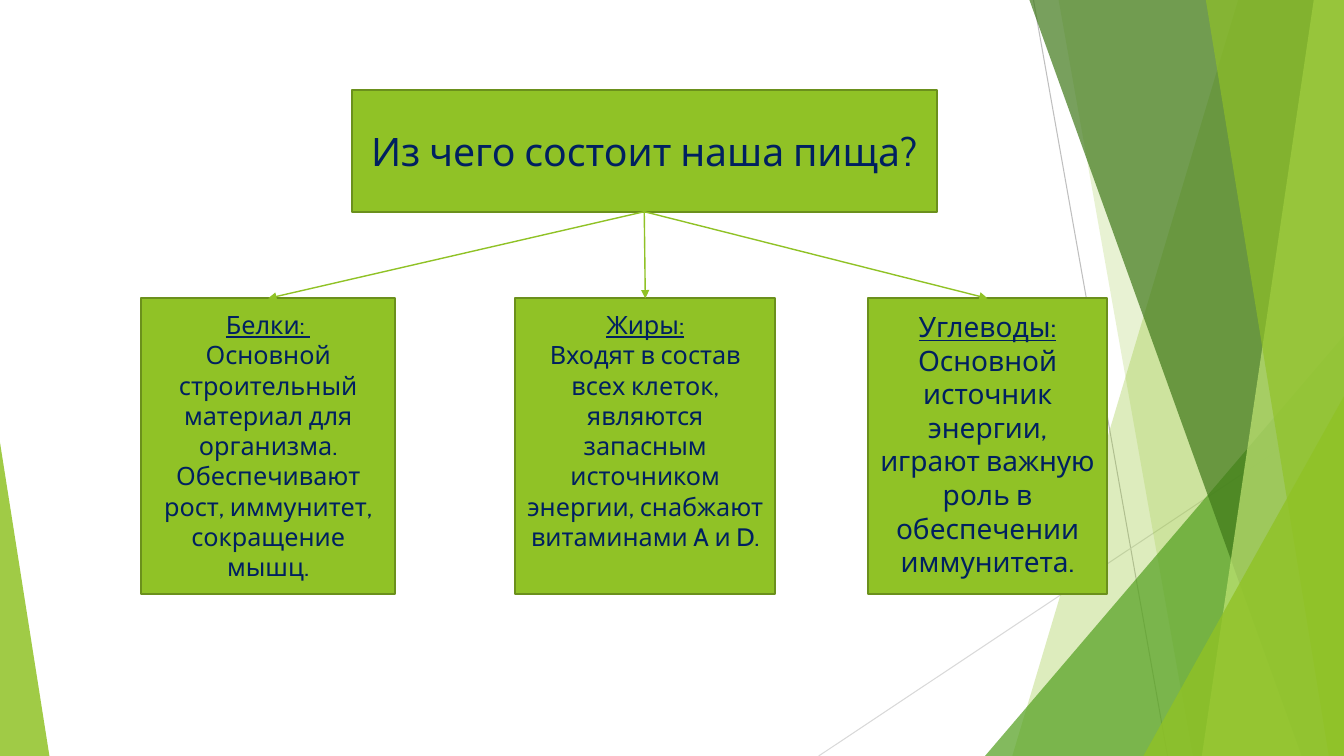
from dataclasses import dataclass

from lxml import etree
from pptx import Presentation
from pptx.dml.color import RGBColor
from pptx.enum.shapes import MSO_CONNECTOR, MSO_SHAPE
from pptx.enum.text import MSO_ANCHOR, MSO_AUTO_SIZE, PP_ALIGN
from pptx.oxml.ns import qn
from pptx.util import Inches, Pt

STRAIGHT = MSO_CONNECTOR.STRAIGHT
RECTANGLE = MSO_SHAPE.RECTANGLE
TRIANGLE = MSO_SHAPE.ISOSCELES_TRIANGLE
TOP, MIDDLE = MSO_ANCHOR.TOP, MSO_ANCHOR.MIDDLE
CENTER = PP_ALIGN.CENTER
NO_AUTOFIT = MSO_AUTO_SIZE.NONE
TOP_SITE, BOTTOM_SITE = 0, 2
TITLE_ONLY = 5


@dataclass(frozen=True)
class Theme:
    font: str = "Cabin"
    ink: str = "002060"
    green: str = "90C226"
    border: str = "6B901C"
    leaf: str = "54A021"
    forest: str = "3F7819"
    lime: str = "C0E474"
    gray: str = "BFBFBF"
    pale_gray: str = "D9D9D9"
    title_size: int = 28
    large_size: int = 20
    body_size: int = 18
    border_width: float = 1.5
    arrow_width: float = 1
    hairline: float = 0.75


THEME = Theme()
WIDTH, HEIGHT = 13.33, 7.5

TITLE = "Из чего состоит наша пища?"
TITLE_AREA = (3.49, 0.89, 5.8, 1.21)

# name, description, type size, left, width
NUTRIENTS = [
    ("Белки: ", "Основной строительный материал для организма. "
     "Обеспечивают рост, иммунитет, сокращение мышц.",
     THEME.body_size, 1.4, 2.52),
    ("Жиры:", "Входят в состав всех клеток, являются запасным источником "
     "энергии, снабжают витаминами A и D.",
     THEME.body_size, 5.11, 2.58),
    ("Углеводы:", "Основной источник энергии, играют важную роль в "
     "обеспечении иммунитета.",
     THEME.large_size, 8.61, 2.37),
]
NUTRIENT_TOP, NUTRIENT_HEIGHT, NUTRIENT_INSET = 2.96, 2.93, 0.11

# start, end, colour
RAYS = [
    ((10.25, 0), (11.58, HEIGHT), THEME.gray),
    ((WIDTH, 4.03), (8.12, HEIGHT), THEME.pale_gray),
]
# Back to front. A band has its top left and bottom left x and runs to the
# right edge; a wedge has its left, top, width and apex position.
FACETS = [
    ("band", (12.28, 10.04), THEME.green, 30),
    ("band", (10.5, 11.83), THEME.green, 20),
    ("wedge", (9.77, 3.33, 3.56, 1), THEME.leaf, 72),
    ("band", (10.21, 12.91), THEME.forest, 70),
    ("band", (13.03, 11.92), THEME.lime, 70),
    ("band", (11.96, 13.18), THEME.green, 65),
    ("wedge", (11.34, 3.93, 1.99, 1), THEME.green, 80),
    ("wedge", (0, 4.39, 0.49, 0), THEME.green, 85),
]


def paint(shape, color, opacity=100):
    shape.fill.solid()
    shape.fill.fore_color.rgb = RGBColor.from_string(color)
    if opacity < 100:
        color_node = shape.fill._xPr.find(".//" + qn("a:srgbClr"))
        etree.SubElement(color_node, qn("a:alpha"), val=str(opacity * 1000))


def outline(shape, color, width):
    shape.line.color.rgb = RGBColor.from_string(color)
    shape.line.width = Pt(width)


def add_line(page, start, end, color, width, arrow=False):
    points = [Inches(value) for value in (*start, *end)]
    line = page.shapes.add_connector(STRAIGHT, *points)
    outline(line, color, width)
    if arrow:
        etree.SubElement(line.line._get_or_add_ln(), qn("a:tailEnd"), type="triangle")
    etree.SubElement(line._element.spPr, qn("a:effectLst"))
    return line


def add_band(page, top_x, bottom_x):
    corners = [(top_x, 0), (WIDTH, 0), (WIDTH, HEIGHT), (bottom_x, HEIGHT)]
    points = [(Inches(x), Inches(y)) for x, y in corners]
    builder = page.shapes.build_freeform(*points[0])
    builder.add_line_segments(points[1:], close=True)
    return builder.convert_to_shape()


def add_wedge(page, left, top, width, apex):
    area = [Inches(value) for value in (left, top, width, HEIGHT - top)]
    wedge = page.shapes.add_shape(TRIANGLE, *area)
    wedge.adjustments[0] = apex
    return wedge


def add_facets(page):
    draw = {"band": add_band, "wedge": add_wedge}
    for kind, geometry, color, opacity in FACETS:
        facet = draw[kind](page, *geometry)
        paint(facet, color, opacity)
        facet.line.fill.background()
        facet.shadow.inherit = False


def write(para, text, *, size, underline=False):
    para.alignment = CENTER
    span = para.add_run()
    span.text = text
    span.font.name = THEME.font
    span.font.size = Pt(size)
    span.font.underline = underline
    span.font.color.rgb = RGBColor.from_string(THEME.ink)


def style_box(box, anchor):
    paint(box, THEME.green)
    outline(box, THEME.border, THEME.border_width)
    frame = box.text_frame
    frame.word_wrap = True
    frame.auto_size = NO_AUTOFIT
    frame.vertical_anchor = anchor
    return frame


def add_title(page):
    title = page.shapes.title
    title.left, title.top, title.width, title.height = map(Inches, TITLE_AREA)
    frame = style_box(title, MIDDLE)
    write(frame.paragraphs[0], TITLE, size=THEME.title_size)
    return title


def add_nutrient(page, name, description, size, left, width):
    area = [Inches(v) for v in (left, NUTRIENT_TOP, width, NUTRIENT_HEIGHT)]
    box = page.shapes.add_shape(RECTANGLE, *area)
    box.shadow.inherit = False
    frame = style_box(box, TOP)
    frame.margin_top = Inches(NUTRIENT_INSET)
    write(frame.paragraphs[0], name, size=size, underline=True)
    write(frame.add_paragraph(), description, size=size)
    return box


def main():
    deck = Presentation()
    deck.slide_width, deck.slide_height = Inches(WIDTH), Inches(HEIGHT)
    page = deck.slides.add_slide(deck.slide_layouts[TITLE_ONLY])
    for start, end, color in RAYS:
        add_line(page, start, end, color, THEME.hairline)
    add_facets(page)
    title = add_title(page)
    for nutrient in NUTRIENTS:
        box = add_nutrient(page, *nutrient)
        arrow = add_line(page, (0, 0), (0, 0), THEME.green, THEME.arrow_width, arrow=True)
        arrow.begin_connect(title, BOTTOM_SITE)
        arrow.end_connect(box, TOP_SITE)
    deck.save("out.pptx")


if __name__ == "__main__":
    main()
